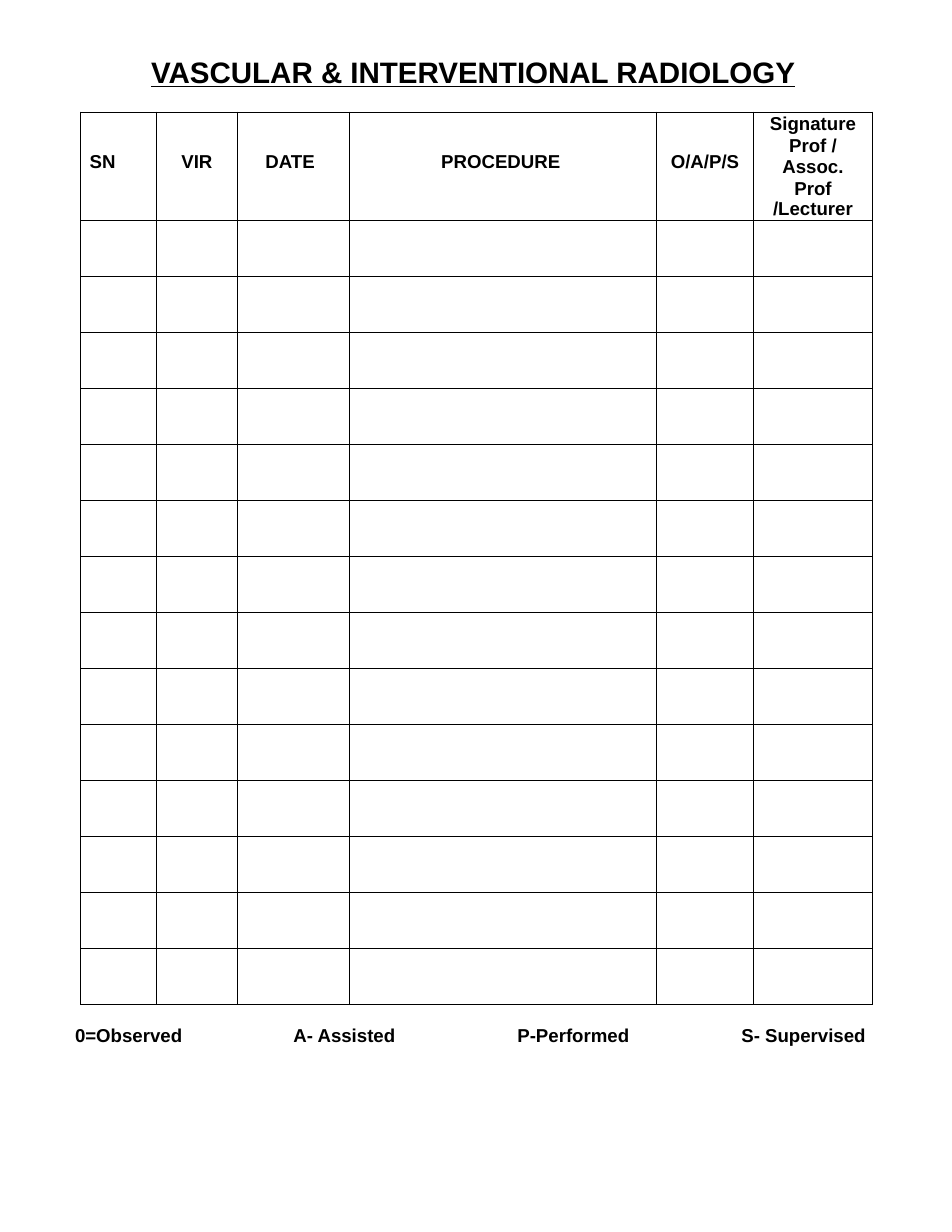
from pptx import Presentation
from pptx.dml.color import RGBColor
from pptx.enum.text import MSO_ANCHOR, PP_ALIGN
from pptx.oxml import parse_xml
from pptx.oxml.ns import nsdecls
from pptx.util import Inches, Pt

INK = "000000"
COLUMNS = [
    ("SN", 0.68, 0.08),
    ("VIR", 0.72, 0.22),
    ("DATE", 1, 0.25),
    ("PROCEDURE", 2.74, 0.82),
    ("O/A/P/S", 0.87, 0.13),
    ("Signature Prof / Assoc. Prof\n/Lecturer", 1.06, 0.13),
]
ENTRY_ROWS = 14
LEGEND = [
    ("0=Observed", 0.99),
    ("A- Assisted", 0.95),
    ("P-Performed", 1.03),
    ("S- Supervised", 1.14),
]


def color(value):
    return RGBColor.from_string(value)


class LogSheet:
    font = "Arial"
    size = 12

    def __init__(self, slide):
        self.s = slide

    def style(self, tf, size, underline=False):
        for p in tf.paragraphs:
            for r in p.runs:
                r.font.name = self.font
                r.font.size = Pt(size)
                r.font.bold = True
                r.font.underline = underline
                r.font.color.rgb = color(INK)

    def label(self, text, x, y, w, h, size=size, underline=False):
        sp = self.s.shapes.add_textbox(Inches(x), Inches(y), Inches(w), Inches(h))
        tf = sp.text_frame
        tf.word_wrap = True
        tf.margin_left = tf.margin_top = Inches(0.01)
        tf.margin_right = tf.margin_bottom = 0
        tf.text = text
        tf.paragraphs[0].space_before = Pt(1)
        self.style(tf, size, underline)

    def cell(self, cell):
        cell.margin_left = cell.margin_right = 0
        cell.margin_top = cell.margin_bottom = 0
        tc_pr = cell._tc.get_or_add_tcPr()
        for side in "LRTB":
            tc_pr.append(parse_xml(
                f'<a:ln{side} {nsdecls("a")} w="{Pt(0.5)}"><a:solidFill>'
                f'<a:srgbClr val="{INK}"/></a:solidFill></a:ln{side}>'))
        cell.fill.background()

    def heading(self, cell, text, indent):
        cell.text_frame.text = text
        cell.margin_left = Inches(indent)
        cell.margin_bottom = Inches(0.08)
        cell.vertical_anchor = MSO_ANCHOR.MIDDLE
        self.style(cell.text_frame, self.size)

    def signature_heading(self, cell):
        cell.margin_right = cell.margin_left
        cell.margin_top = Inches(0.01)
        cell.margin_bottom = 0
        cell.vertical_anchor = MSO_ANCHOR.TOP
        for p, spacing in zip(cell.text_frame.paragraphs, (13.8, 12.8)):
            p.alignment = PP_ALIGN.CENTER
            p.line_spacing = Pt(spacing)

    def table(self, x, y, columns, head_h, row_h, entries):
        width = sum(w for _, w, _ in columns)
        height = head_h + entries * row_h
        tbl = self.s.shapes.add_table(
            entries + 1, len(columns),
            Inches(x), Inches(y), Inches(width), Inches(height)).table
        tbl.first_row = tbl.horz_banding = False
        for row in tbl.rows:
            row.height = Inches(row_h)
        tbl.rows[0].height = Inches(head_h)
        for cell in tbl.iter_cells():
            self.cell(cell)
        for i, (text, w, indent) in enumerate(columns):
            tbl.columns[i].width = Inches(w)
            self.heading(tbl.cell(0, i), text, indent)
        self.signature_heading(tbl.cell(0, len(columns) - 1))


def main():
    prs = Presentation()
    prs.slide_width = Inches(8.5)
    prs.slide_height = Inches(11)
    sheet = LogSheet(prs.slides.add_slide(prs.slide_layouts[6]))
    sheet.label("VASCULAR & INTERVENTIONAL RADIOLOGY",
                1.34, 0.47, 5.82, 0.34, size=19, underline=True)
    sheet.table(0.72, 1, COLUMNS, 0.97, 0.5, ENTRY_ROWS)
    for i, (text, w) in enumerate(LEGEND):
        sheet.label(text, 0.66 + i * 1.98 if i == 0 else 0.61 + i * 2, 9.13, w, 0.23)
    prs.save("out.pptx")


if __name__ == "__main__":
    main()
